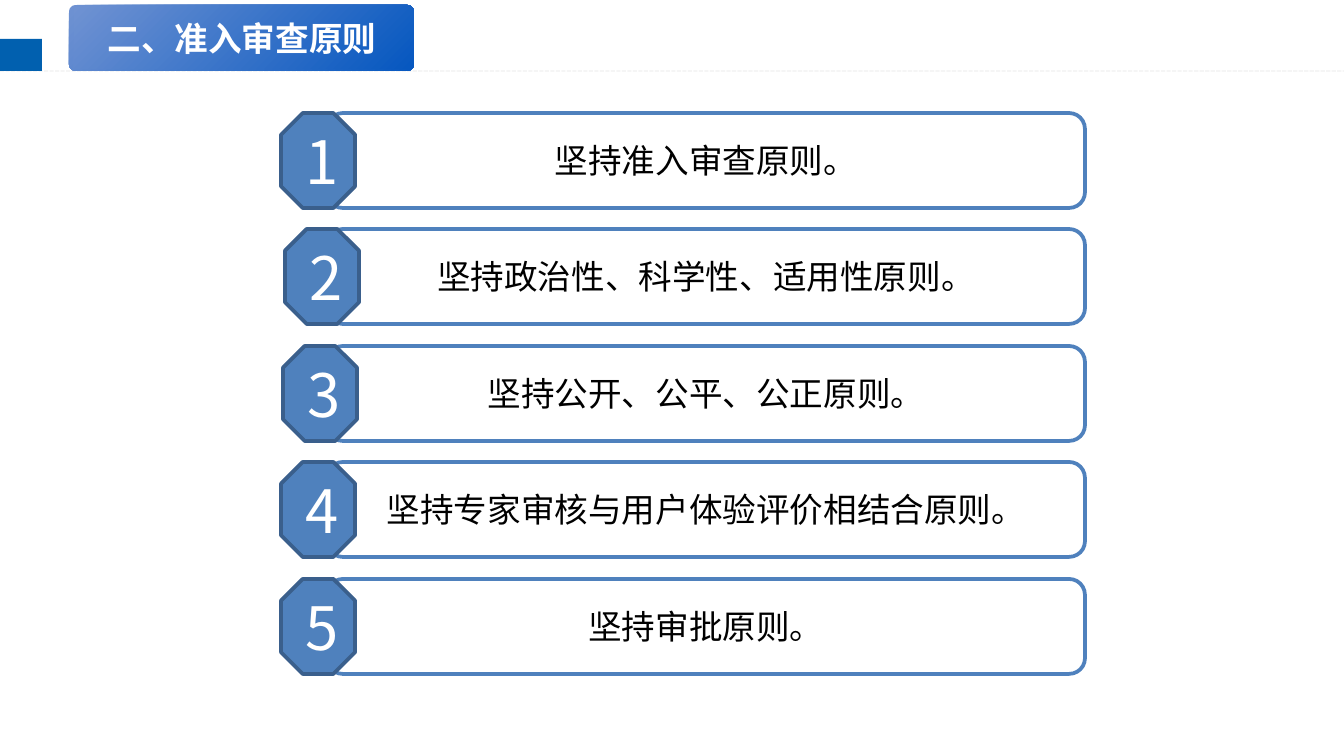
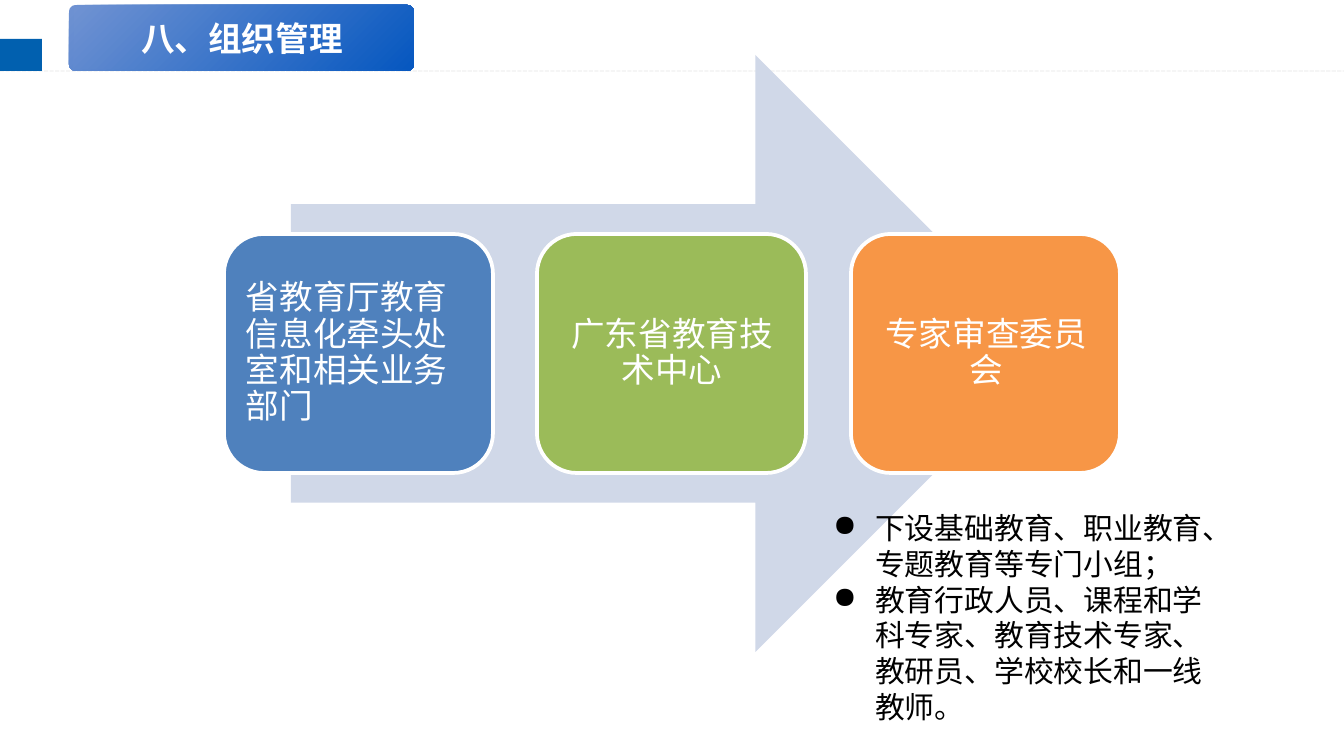
from typing import NamedTuple

from lxml.etree import SubElement
from pptx import Presentation
from pptx.dml.color import RGBColor
from pptx.enum.dml import MSO_LINE
from pptx.enum.shapes import MSO_CONNECTOR, MSO_SHAPE
from pptx.enum.text import MSO_ANCHOR, MSO_AUTO_SIZE, PP_ALIGN
from pptx.oxml.ns import qn
from pptx.util import Emu, Pt

PX_PER_INCH = 134.4
FONT = "Noto Sans CJK SC"

WHITE = RGBColor(0xFF, 0xFF, 0xFF)
BLACK = RGBColor(0x00, 0x00, 0x00)
RULE_GREY = RGBColor(0xC0, 0xC0, 0xC0)
TAB_BLUE = RGBColor(0x01, 0x60, 0xAF)
TITLE_GRADIENT = (RGBColor(0x6F, 0x92, 0xD2), RGBColor(0x07, 0x58, 0xC0))
BLUE = RGBColor(0x4F, 0x81, 0xBD)
DARK_BLUE = RGBColor(0x3A, 0x5F, 0x8C)
GREEN = RGBColor(0x9B, 0xBB, 0x59)
ORANGE = RGBColor(0xF7, 0x96, 0x46)
PALE_BLUE = RGBColor(0xD0, 0xD8, 0xE8)

PRINCIPLES = (
    "坚持准入审查原则。",
    "坚持政治性、科学性、适用性原则。",
    "坚持公开、公平、公正原则。",
    "坚持专家审核与用户体验评价相结合原则。",
    "坚持审批原则。",
)
BADGE_SHIFTS = (0, 4, 2, 0, 0)
BODIES = (
    ("省教育厅教育信息化牵头处室和相关业务部门", BLUE, PP_ALIGN.LEFT),
    ("广东省教育技术中心", GREEN, PP_ALIGN.CENTER),
    ("专家审查委员会", ORANGE, PP_ALIGN.CENTER),
)
COMMITTEE_NOTES = (
    "下设基础教育、职业教育、专题教育等专门小组；",
    "教育行政人员、课程和学科专家、教育技术专家、教研员、学校校长和一线教师。",
)


def px(length):
    return Emu(round(length * 914400 / PX_PER_INCH))


class Box(NamedTuple):
    left: int
    top: int
    width: int
    height: int

    def emu(self):
        return [px(length) for length in self]

    def inner(self, left, top, width, height):
        """Box whose position is given relative to this one."""
        return Box(self.left + left, self.top + top, width, height)


def set_attributes(target, values):
    for name, value in values.items():
        setattr(target, name, value)


def add_shape(shapes, kind, box, fill, outline=None):
    """Add a preset shape; a pair of colours as fill makes a diagonal gradient."""
    shape = shapes.add_shape(kind, *box.emu())
    shape.shadow.inherit = False
    if isinstance(fill, RGBColor):
        shape.fill.solid()
        shape.fill.fore_color.rgb = fill
    else:
        shape.fill.gradient()
        shape.fill.gradient_angle = 315
        for stop, color in zip(shape.fill.gradient_stops, fill):
            stop.color.rgb = color
    if outline is None:
        shape.line.fill.background()
    else:
        shape.line.color.rgb = outline
        shape.line.width = Pt(2)
    return shape


def write(paragraph, text, size, color, align=PP_ALIGN.CENTER, bold=False):
    paragraph.alignment = align
    run = paragraph.add_run()
    run.text = text
    set_attributes(run.font, {"name": FONT, "size": Pt(size), "bold": bold})
    run.font.color.rgb = color
    SubElement(run.font._element, qn("a:ea"), typeface=FONT)


def add_bullet(paragraph):
    properties = paragraph._p.get_or_add_pPr()
    properties.set("marL", str(px(42)))
    properties.set("indent", str(-px(42)))
    SubElement(properties, qn("a:buChar"), char="●")


def add_rule(slide, top):
    rule = slide.shapes.add_connector(
        MSO_CONNECTOR.STRAIGHT, 0, px(top), px(1344), px(top))
    rule.line.color.rgb = RULE_GREY
    set_attributes(rule.line, {"width": Pt(0.75), "dash_style": MSO_LINE.SQUARE_DOT})
    properties = rule._element.spPr
    color = properties.find(".//" + qn("a:srgbClr"))
    SubElement(color, qn("a:alpha"), val="22000")
    SubElement(properties, qn("a:effectLst"))


def add_header(slide, title, box):
    add_rule(slide, box.top + box.height)
    add_shape(slide.shapes, MSO_SHAPE.RECTANGLE, box.inner(0, 39, 42, 32), TAB_BLUE)
    plate = slide.shapes.add_group_shape().shapes
    frame = add_shape(plate, MSO_SHAPE.ROUNDED_RECTANGLE,
                      box.inner(69, 5, 345, 66), TITLE_GRADIENT)
    frame.adjustments[0] = 0.1
    label = add_shape(plate, MSO_SHAPE.RECTANGLE,
                      box.inner(74, 7, 336, 62), TITLE_GRADIENT)
    write(label.text_frame.paragraphs[0], title, 18, WHITE, bold=True)


def add_principles(slide, box):
    rows = [box.inner(0, index * 233 // 2, box.width, 95)
            for index in range(len(PRINCIPLES))]
    for row, text in zip(rows, PRINCIPLES):
        bar = add_shape(slide.shapes, MSO_SHAPE.ROUNDED_RECTANGLE,
                        row.inner(46, 0, row.width - 46, row.height), WHITE, BLUE)
        write(bar.text_frame.paragraphs[0], text, 18, BLACK)
    for number, (row, shift) in enumerate(zip(rows, BADGE_SHIFTS), 1):
        badge = add_shape(slide.shapes, MSO_SHAPE.OCTAGON,
                          row.inner(shift, 0, 74, row.height), BLUE, DARK_BLUE)
        write(badge.text_frame.paragraphs[0], str(number), 32, WHITE)


def add_card(shapes, box, text, fill, align):
    add_shape(shapes, MSO_SHAPE.ROUNDED_RECTANGLE, box, fill, WHITE)
    label = box.inner(12, 12, box.width - 23, box.height - 24)
    frame = shapes.add_textbox(*label.emu()).text_frame
    set_attributes(frame, {
        "word_wrap": True, "vertical_anchor": MSO_ANCHOR.MIDDLE,
        "margin_left": px(10), "margin_right": px(10),
        "margin_top": px(10), "margin_bottom": px(10),
    })
    paragraph = frame.paragraphs[0]
    paragraph.line_spacing = 0.9
    write(paragraph, text, 18, WHITE, align)


def add_organisation(slide, box):
    """Three bodies in a row on a wide arrow."""
    shapes = slide.shapes.add_group_shape().shapes
    add_shape(shapes, MSO_SHAPE.RIGHT_ARROW,
              box.inner(67, 0, box.width - 133, box.height), PALE_BLUE)
    for index, body in enumerate(BODIES):
        add_card(shapes, box.inner(index * 627 // 2, 179, 269, 239), *body)


def add_committee_notes(slide, box):
    text_box = slide.shapes.add_textbox(*box.emu())
    frame = text_box.text_frame
    set_attributes(frame, {"word_wrap": True,
                           "auto_size": MSO_AUTO_SIZE.SHAPE_TO_FIT_TEXT})
    for index, note in enumerate(COMMITTEE_NOTES):
        paragraph = frame.add_paragraph() if index else frame.paragraphs[0]
        write(paragraph, note, 16, BLACK, PP_ALIGN.LEFT)
        add_bullet(paragraph)


def add_titled_slide(presentation, title):
    slide = presentation.slides.add_slide(presentation.slide_layouts[6])
    add_header(slide, title, Box(0, 0, 1344, 71))
    return slide


def main():
    presentation = Presentation()
    set_attributes(presentation, {"slide_width": px(1344), "slide_height": px(756)})

    principles = add_titled_slide(presentation, "二、准入审查原则")
    add_principles(principles, Box(281, 113, 804, 561))

    organisation = add_titled_slide(presentation, "八、组织管理")
    add_organisation(organisation, Box(224, 55, 896, 597))
    add_committee_notes(organisation, Box(820, 503, 402, 267))

    presentation.save("out.pptx")


if __name__ == "__main__":
    main()
